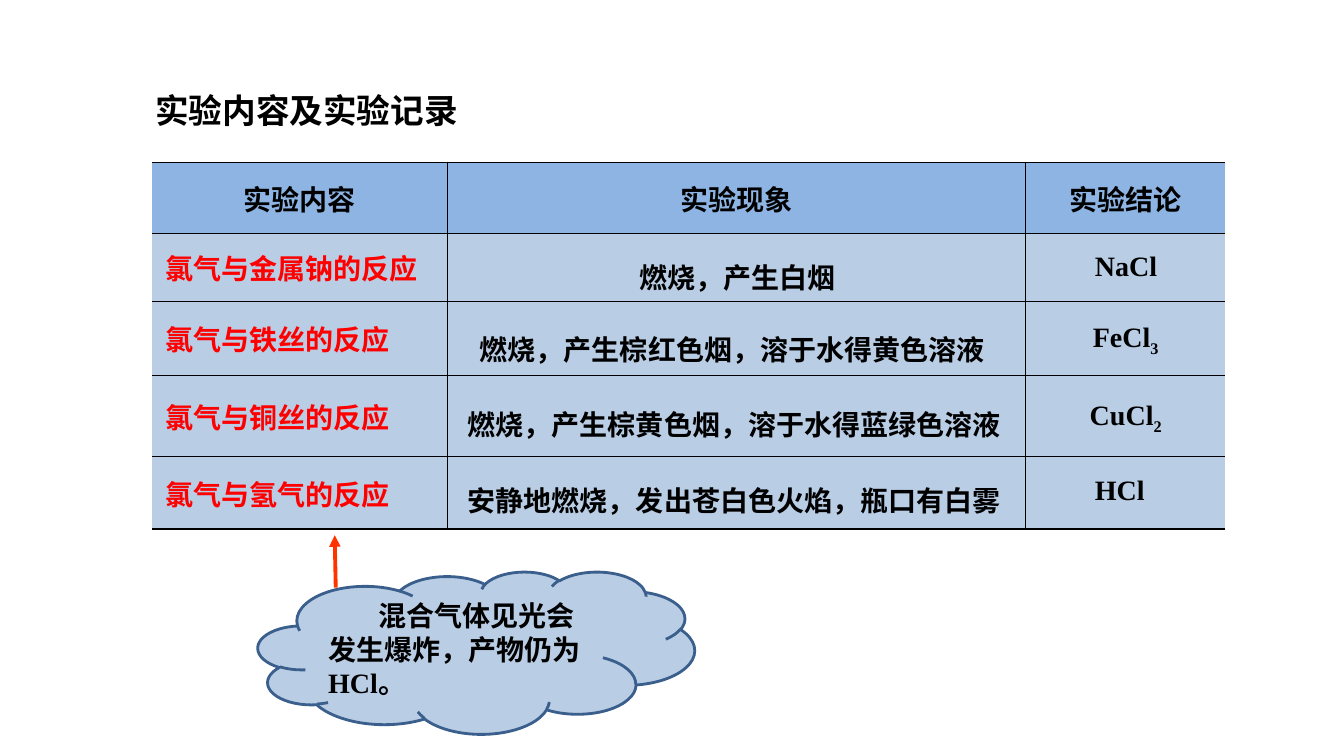
from dataclasses import dataclass

from lxml.etree import SubElement
from pptx import Presentation
from pptx.dml.color import RGBColor
from pptx.enum.shapes import MSO_CONNECTOR, MSO_SHAPE
from pptx.enum.text import MSO_ANCHOR, MSO_AUTO_SIZE, PP_ALIGN
from pptx.oxml.ns import qn
from pptx.util import Emu, Pt

PX = 9144  # EMU in one px, 100 px to the inch


@dataclass(frozen=True)
class Theme:
    black: str = "000000"
    red: str = "FF0000"
    arrow: str = "FF3300"
    header: str = "8EB4E3"
    body: str = "B9CDE5"
    outline: str = "3A5F8C"
    sans: str = "Noto Sans CJK SC"
    serif: str = "Times New Roman"
    heading: str = "Calibri"
    title_size: int = 24
    text_size: int = 20
    rule: float = 1
    bottom_rule: float = 2.25


@dataclass(frozen=True)
class Box:
    left: int
    top: int
    width: int
    height: int

    def emu(self) -> list[Emu]:
        return [px(v) for v in (self.left, self.top, self.width, self.height)]


@dataclass(frozen=True)
class Note:
    box: Box
    text: str
    subscript: str = ""
    line_spacing: float = 1.0


THEME = Theme()
COLUMNS = (293, 573, 198)
ROWS = (71, 67, 74, 80, 72)
HEADERS = ("实验内容", "实验现象", "实验结论")
REACTIONS = ("氯气与金属钠的反应", "氯气与铁丝的反应", "氯气与铜丝的反应", "氯气与氢气的反应")
NOTES = (
    # Observations
    Note(Box(624, 237, 237, 54), "燃烧，产生白烟", line_spacing=1.5),
    Note(Box(466, 308, 532, 54), "燃烧，产生棕红色烟，溶于水得黄色溶液", line_spacing=1.5),
    Note(Box(454, 383, 552, 54), "燃烧，产生棕黄色烟，溶于水得蓝绿色溶液", line_spacing=1.5),
    Note(Box(454, 458, 552, 54), "安静地燃烧，发出苍白色火焰，瓶口有白雾", line_spacing=1.5),
    # Products
    Note(Box(1076, 242, 85, 43), "NaCl"),
    Note(Box(1074, 312, 189, 43), "FeCl", "3"),
    Note(Box(1071, 389, 144, 43), "CuCl", "2"),
    Note(Box(1076, 464, 109, 43), "HCl"),
)


def px(value: int) -> Emu:
    return Emu(value * PX)


def rgb(color: str) -> RGBColor:
    return RGBColor.from_string(color)


def add_run(p, text: str, font: str, size: int = THEME.text_size, color: str = THEME.black):
    r = p.add_run()
    r.text = text
    r.font.name, r.font.size, r.font.bold = font, Pt(size), True
    r.font.color.rgb = rgb(color)
    SubElement(r.font._element, qn("a:ea"), typeface=THEME.sans)
    return r


def set_borders(cell, **widths: float) -> None:
    """Draw the four sides of a cell; a width of 0 hides the side."""
    tc_pr = cell._tc.get_or_add_tcPr()
    for i, (side, width) in enumerate(widths.items()):
        ln = tc_pr.makeelement(qn(f"a:ln{side}"), {"w": str(Pt(width))})
        if width:
            fill = SubElement(ln, qn("a:solidFill"))
            SubElement(fill, qn("a:srgbClr"), val=THEME.black)
        else:
            SubElement(ln, qn("a:noFill"))
        tc_pr.insert(i, ln)


def add_title(s) -> None:
    sp = s.shapes.title
    sp.left, sp.top, sp.width, sp.height = Box(144, 84, 539, 50).emu()
    tf = sp.text_frame
    tf.word_wrap = True
    tf.auto_size = MSO_AUTO_SIZE.SHAPE_TO_FIT_TEXT
    tf.vertical_anchor = MSO_ANCHOR.TOP
    p = tf.paragraphs[0]
    p.alignment = PP_ALIGN.LEFT
    add_run(p, "实验内容及实验记录", THEME.heading, THEME.title_size)


def add_record_table(s) -> None:
    box = Box(151, 161, sum(COLUMNS), sum(ROWS))
    table = s.shapes.add_table(len(ROWS), len(COLUMNS), *box.emu()).table
    table.first_row = table.horz_banding = False
    for column, width in zip(table.columns, COLUMNS):
        column.width = px(width)
    texts = [HEADERS] + [(reaction, "", "") for reaction in REACTIONS]
    for i, (row, height) in enumerate(zip(table.rows, ROWS)):
        row.height = px(height)
        for j, cell in enumerate(row.cells):
            cell.margin_left = cell.margin_right = px(13)
            cell.margin_top = cell.margin_bottom = px(5)
            cell.vertical_anchor = MSO_ANCHOR.MIDDLE
            cell.fill.solid()
            cell.fill.fore_color.rgb = rgb(THEME.body if i else THEME.header)
            set_borders(
                cell,
                L=THEME.rule if j else 0,
                R=THEME.rule if j < len(COLUMNS) - 1 else 0,
                T=THEME.rule,
                B=THEME.rule if i < len(ROWS) - 1 else THEME.bottom_rule,
            )
            if texts[i][j]:
                p = cell.text_frame.paragraphs[0]
                p.alignment = PP_ALIGN.JUSTIFY if i else PP_ALIGN.CENTER
                add_run(p, texts[i][j], THEME.sans, color=THEME.red if i else THEME.black)


def add_note(s, note: Note) -> None:
    tf = s.shapes.add_textbox(*note.box.emu()).text_frame
    tf.word_wrap = True
    tf.auto_size = MSO_AUTO_SIZE.SHAPE_TO_FIT_TEXT
    p = tf.paragraphs[0]
    p.line_spacing = note.line_spacing
    add_run(p, note.text, THEME.serif)
    if note.subscript:
        r = add_run(p, note.subscript, THEME.serif)
        r.font._element.set("baseline", "-25000")


def add_arrow(s) -> None:
    ends = [px(v) for v in (333, 583, 332, 531)]
    line = s.shapes.add_connector(MSO_CONNECTOR.STRAIGHT, *ends)
    line.line.color.rgb = rgb(THEME.arrow)
    line.line.width = Pt(2.75)
    SubElement(line.line._get_or_add_ln(), qn("a:tailEnd"), type="triangle")
    SubElement(line._element.spPr, qn("a:effectLst"))


def add_cloud(s) -> None:
    sp = s.shapes.add_shape(MSO_SHAPE.CLOUD, *Box(256, 567, 433, 161).emu())
    sp.shadow.inherit = False
    sp.fill.solid()
    sp.fill.fore_color.rgb = rgb(THEME.body)
    sp.line.color.rgb = rgb(THEME.outline)
    sp.line.width = Pt(2)
    tf = sp.text_frame
    tf.word_wrap = True
    tf.vertical_anchor = MSO_ANCHOR.MIDDLE
    p = tf.paragraphs[0]
    p.alignment = PP_ALIGN.LEFT
    p._p.get_or_add_pPr().set("indent", str(px(50)))
    add_run(p, "混合气体见光会发生爆炸，产物仍为HCl。", THEME.serif)


def main() -> None:
    prs = Presentation()
    prs.slide_width, prs.slide_height = px(1333), px(750)
    s = prs.slides.add_slide(prs.slide_layouts[5])
    add_title(s)
    add_record_table(s)
    for note in NOTES:
        add_note(s, note)
    add_arrow(s)
    add_cloud(s)
    prs.save("out.pptx")


if __name__ == "__main__":
    main()
